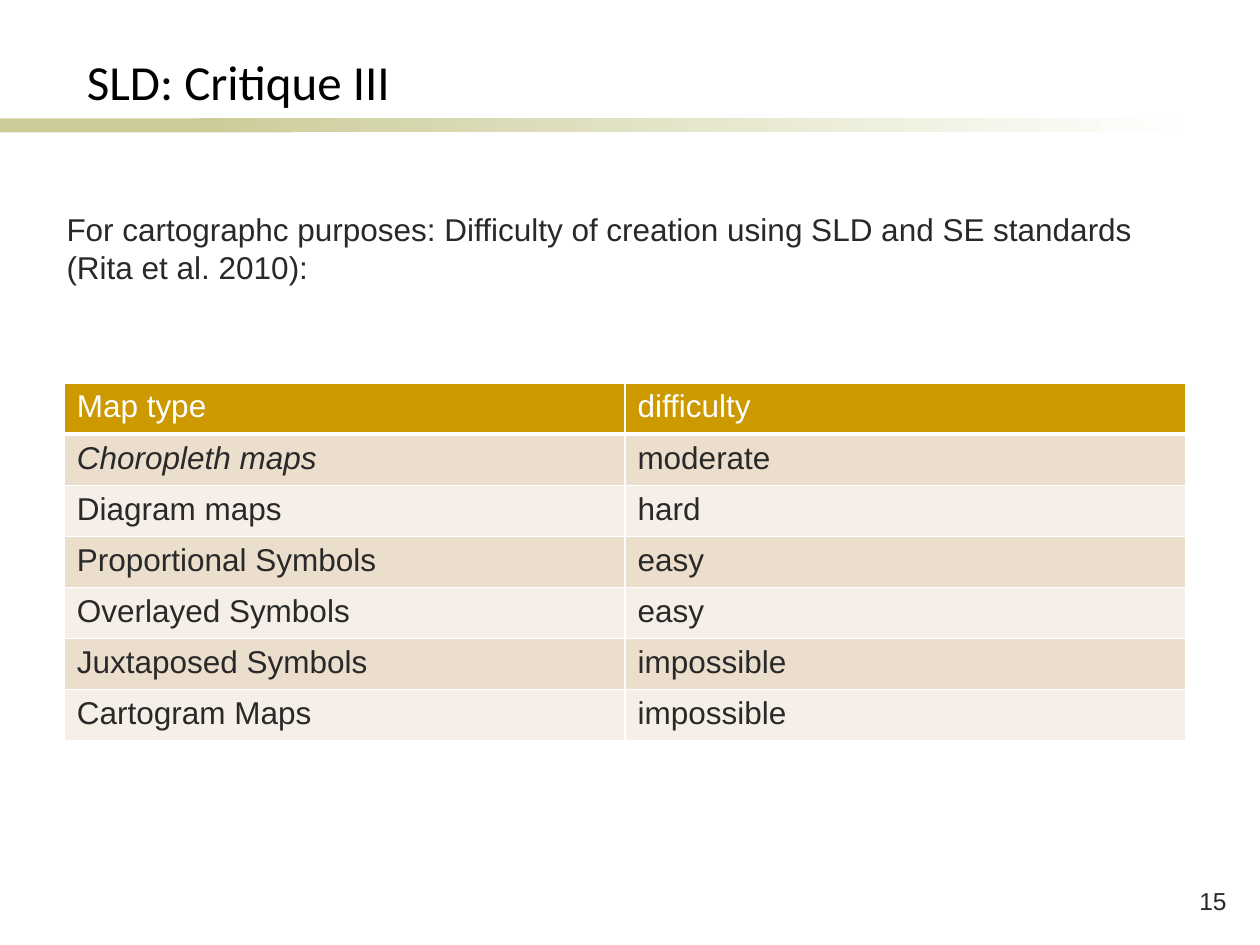
from lxml import etree
from pptx import Presentation
from pptx.dml.color import RGBColor
from pptx.enum.shapes import MSO_SHAPE
from pptx.enum.text import MSO_ANCHOR, MSO_AUTO_SIZE, PP_ALIGN
from pptx.oxml.ns import qn
from pptx.util import Inches, Pt

RECT = MSO_SHAPE.RECTANGLE
LEFT, BOTTOM = PP_ALIGN.LEFT, MSO_ANCHOR.BOTTOM
NO_FIT, GROW = MSO_AUTO_SIZE.NONE, MSO_AUTO_SIZE.SHAPE_TO_FIT_TEXT

BLACK = RGBColor(0x00, 0x00, 0x00)
WHITE = RGBColor(0xFF, 0xFF, 0xFF)
INK = RGBColor(0x29, 0x29, 0x29)
OLIVE = RGBColor(0xCC, 0xCC, 0x99)
GOLD = RGBColor(0xCC, 0x99, 0x00)
BANDS = (RGBColor(0xF6, 0xEF, 0xE7), RGBColor(0xEC, 0xDE, 0xCC))

ROWS = [
    ("Map type", "difficulty"),
    ("Choropleth maps", "moderate"),
    ("Diagram maps", "hard"),
    ("Proportional Symbols", "easy"),
    ("Overlayed Symbols", "easy"),
    ("Juxtaposed Symbols", "impossible"),
    ("Cartogram Maps", "impossible"),
]
ITALIC_CELL = (1, 0)


def box(left, top, width, height):
    return [Inches(v) for v in (left, top, width, height)]


def style(p, size, color, name="Arial"):
    p.font.size = Pt(size)
    p.font.name = name
    p.font.color.rgb = color


def add_bar(s, left, width):
    bar = s.shapes.add_shape(RECT, *box(left, 0.94, width, 0.11))
    bar.shadow.inherit = False
    bar.line.fill.background()
    return bar.fill


def add_rule(s):
    """Solid bar that fades to white towards the right."""
    solid = add_bar(s, 0, 2.33)
    solid.solid()
    solid.fore_color.rgb = OLIVE
    fade = add_bar(s, 1.58, 7.92)
    fade.gradient()
    fade.gradient_angle = 0
    for stop, color in zip(fade.gradient_stops, (OLIVE, WHITE)):
        stop.color.rgb = color


def set_title(s, text):
    title = s.shapes.title
    title.left, title.top, title.width, title.height = box(0.59, 0.05, 8.9, 0.88)
    tf = title.text_frame
    tf.text = text
    tf.auto_size = NO_FIT
    tf.vertical_anchor = BOTTOM
    p = tf.paragraphs[0]
    p.alignment = LEFT
    style(p, 28, BLACK, "Calibri")


def add_text(s, place, text, size, wrap=True):
    tf = s.shapes.add_textbox(*place).text_frame
    tf.text = text
    tf.word_wrap = wrap
    tf.auto_size = GROW
    style(tf.paragraphs[0], size, INK)


def set_borders(cell, top, bottom):
    """White cell borders; top and bottom widths are in points."""
    tc_pr = cell._tc.get_or_add_tcPr()
    widths = {"a:lnL": 1, "a:lnR": 1, "a:lnT": top, "a:lnB": bottom}
    for i, (tag, width) in enumerate(widths.items()):
        ln = etree.Element(qn(tag), w=str(Pt(width)))
        fill = etree.SubElement(ln, qn("a:solidFill"))
        etree.SubElement(fill, qn("a:srgbClr"), val=str(WHITE))
        tc_pr.insert(i, ln)


def add_difficulty_table(s):
    place = box(0.51, 3.04, 8.9, 2.84)
    table = s.shapes.add_table(len(ROWS), len(ROWS[0]), *place).table
    table.horz_banding = False
    for r, row in enumerate(ROWS):
        for c, text in enumerate(row):
            cell = table.cell(r, c)
            cell.text = text
            cell.fill.solid()
            cell.fill.fore_color.rgb = BANDS[r % 2] if r else GOLD
            p = cell.text_frame.paragraphs[0]
            style(p, 18, INK if r else WHITE)
            p.font.bold = False
            p.font.italic = (r, c) == ITALIC_CELL
            set_borders(cell, top=3 if r == 1 else 1, bottom=1 if r else 3)


def main():
    prs = Presentation()
    prs.slide_width, prs.slide_height = Inches(10), Inches(7.5)
    s = prs.slides.add_slide(prs.slide_layouts[5])
    add_rule(s)
    add_text(s, box(9.42, 6.98, 0.58, 0.34), "15", 14, wrap=False)
    set_title(s, "SLD: Critique III")
    add_difficulty_table(s)
    add_text(s, box(0.43, 1.62, 8.9, 0.71),
             "For cartographc purposes: Difficulty of creation using SLD "
             "and SE standards (Rita et al. 2010):", 18)
    prs.save("out.pptx")


if __name__ == "__main__":
    main()
